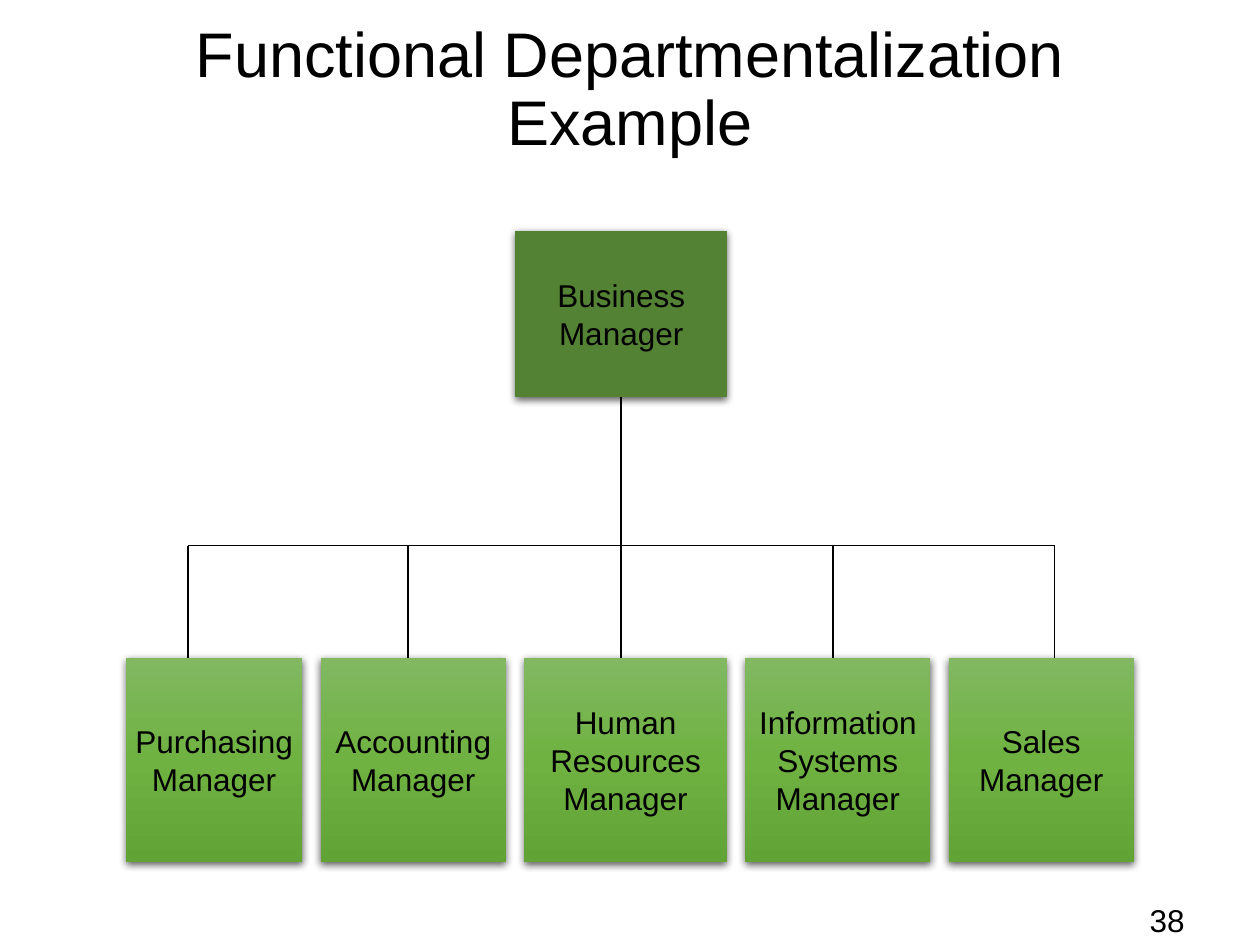
from copy import deepcopy

from lxml import etree
from pptx import Presentation
from pptx.dml.color import RGBColor
from pptx.enum.shapes import MSO_CONNECTOR, MSO_SHAPE
from pptx.enum.text import MSO_ANCHOR, PP_ALIGN
from pptx.oxml import parse_xml
from pptx.oxml.ns import nsdecls, qn
from pptx.util import Inches, Pt

BLACK = "000000"
ROOT_GREEN = "548235"
GREENS = ["81B861", "6FB242", "62A336"]
ROOT = (4.09, 1.83, 1.68, 1.32)
TRUNK_X, BUS_Y, ROW_Y, ROW_H = 4.93, 4.33, 5.22, 1.62
ROW_LEFT, ROW_WIDTH = 1, 8
DEPARTMENTS = [
    (["Purchasing", "Manager"], 1.4, 1.49),
    (["Accounting", "Manager"], 1.47, 3.24),
    (["Human", "Resources", "Manager"], 1.61, TRUNK_X),
    (["Information", "Systems", "Manager"], 1.47, 6.61),
    (["Sales", "Manager"], 1.47, 8.37),
]


def rgb(value):
    return RGBColor.from_string(value)


def add_lines(tf, lines, size, align):
    for i, line in enumerate(lines):
        p = tf.paragraphs[0] if i == 0 else tf.add_paragraph()
        p.alignment = align
        r = p.add_run()
        r.text = line
        r.font.size = Pt(size)
        r.font.name = "Arial"
        r.font.color.rgb = rgb(BLACK)


def add_title(slide, text):
    s = slide.shapes.title
    s.left, s.top, s.width, s.height = map(Inches, (0.5, 0, 9, 1.45))
    tf = s.text_frame
    tf.word_wrap = True
    tf.vertical_anchor = MSO_ANCHOR.MIDDLE
    add_lines(tf, [text], 36, PP_ALIGN.CENTER)
    tf.paragraphs[0].line_spacing = 0.9


def add_page_number(slide, text):
    s = slide.shapes.add_textbox(*map(Inches, (8.25, 7.1, 1.25, 0.4)))
    s.text_frame.word_wrap = True
    add_lines(s.text_frame, [text], 18, PP_ALIGN.RIGHT)


def add_line(slide, x1, y1, x2, y2):
    s = slide.shapes.add_connector(MSO_CONNECTOR.STRAIGHT, *map(Inches, (x1, y1, x2, y2)))
    s.line.color.rgb = rgb(BLACK)
    s.line.width = Pt(1)
    etree.SubElement(s._element.spPr, qn("a:effectLst"))


def fill_box(s, colors):
    if len(colors) == 1:
        s.fill.solid()
        s.fill.fore_color.rgb = rgb(colors[0])
        return
    s.fill.gradient()
    s.fill.gradient_angle = 270
    stops = s._element.spPr.find(".//" + qn("a:gsLst"))
    while len(stops) < len(colors):
        stops.insert(1, deepcopy(stops[0]))
    for i, (stop, color) in enumerate(zip(s.fill.gradient_stops, colors)):
        stop.position = i / (len(colors) - 1)
        stop.color.rgb = rgb(color)


def add_shadow(s):
    s.shadow.inherit = False
    s._element.spPr.find(qn("a:effectLst")).append(parse_xml(
        f'<a:outerShdw {nsdecls("a")} blurRad="{Pt(4.5)}" dist="{Pt(1.5)}" '
        f'dir="5400000" algn="ctr" rotWithShape="0"><a:srgbClr val="{BLACK}">'
        '<a:alpha val="63000"/></a:srgbClr></a:outerShdw>'))


def add_box(slide, bounds, lines, colors):
    s = slide.shapes.add_shape(MSO_SHAPE.FLOWCHART_PROCESS, *map(Inches, bounds))
    fill_box(s, colors)
    s.line.fill.background()
    add_shadow(s)
    tf = s.text_frame
    tf.word_wrap = False
    tf.vertical_anchor = MSO_ANCHOR.MIDDLE
    add_lines(tf, lines, 18, PP_ALIGN.CENTER)


def add_org_chart(slide):
    stubs = [x for _, _, x in DEPARTMENTS]
    add_line(slide, TRUNK_X, ROOT[1] + ROOT[3], TRUNK_X, BUS_Y)
    add_line(slide, stubs[0], BUS_Y, stubs[-1], BUS_Y)
    for x in stubs:
        add_line(slide, x, BUS_Y, x, ROW_Y)

    add_box(slide, ROOT, ["Business", "Manager"], [ROOT_GREEN])
    gap = (ROW_WIDTH - sum(w for _, w, _ in DEPARTMENTS)) / (len(DEPARTMENTS) - 1)
    left = ROW_LEFT
    for lines, width, _ in DEPARTMENTS:
        add_box(slide, (left, ROW_Y, width, ROW_H), lines, GREENS)
        left += width + gap


def main():
    prs = Presentation()
    prs.slide_width, prs.slide_height = Inches(10), Inches(7.5)
    slide = prs.slides.add_slide(prs.slide_layouts[5])
    add_page_number(slide, "38")
    add_title(slide, "Functional Departmentalization Example")
    add_org_chart(slide)
    prs.save("out.pptx")


if __name__ == "__main__":
    main()
